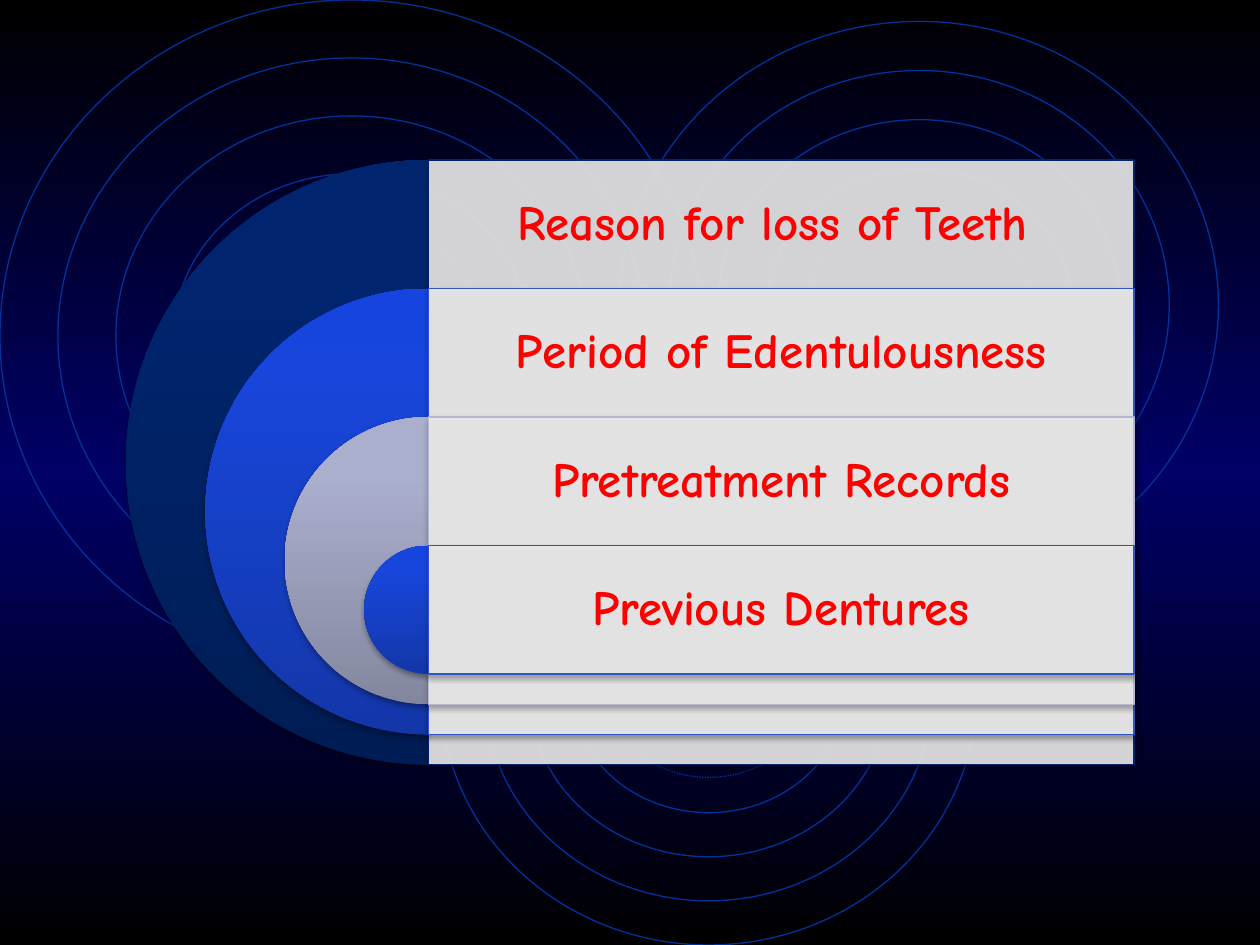
import copy
import lxml.etree
import pptx
import pptx.dml.color
import pptx.enum.dml
import pptx.enum.shapes
import pptx.enum.text
import pptx.oxml.ns
import pptx.util

NAVY = ("001C54", "00256E", "00256E")
BLUE = ("1336A8", "1846DA", "1544DF")
GREY = ("83879E", "ABAFCE", "ABB0CF")
THEME = {
    "background": ("000000", "000066", "000000"),
    "ring": "003399",
    "panel": "EAEAEA",
    "text": "FF0000",
    "font": "Comic Neue",
    "size": 28,
    "line": 0.75,
}
SHAPE = pptx.enum.shapes.MSO_SHAPE
rgb = pptx.dml.color.RGBColor.from_string
qn = pptx.oxml.ns.qn


def set_gradient(fill, colors, middle, angle):
    fill.gradient()
    fill.gradient_angle = angle
    last = fill.gradient_stops[1]._gs
    last.addprevious(copy.deepcopy(last))
    for stop, color, position in zip(fill.gradient_stops, colors, (0, middle, 1)):
        stop.color.rgb = rgb(color)
        stop.position = position


def add_shadow(sp):
    sp.shadow.inherit = False
    effects = sp._element.spPr.find(qn("a:effectLst"))
    shadow = lxml.etree.SubElement(effects, qn("a:outerShdw"), blurRad="40000",
                                   dist="23000", dir="5400000", rotWithShape="0")
    color = lxml.etree.SubElement(shadow, qn("a:srgbClr"), val="000000")
    lxml.etree.SubElement(color, qn("a:alpha"), val="35000")


prs = pptx.Presentation()
prs.slide_width = pptx.util.Inches(10)
prs.slide_height = pptx.util.Inches(7.5)
col, row = prs.slide_width / 10, prs.slide_height / 7.5
s = prs.slides.add_slide(prs.slide_layouts[6])
set_gradient(s.background.fill, THEME["background"], 0.5, 270)

ripples = [(0, 0, 5.58, 5.33, 0.46), (3.5, 3.5, 4.25, 4, 0.35), (4.92, 0.17, 4.75, 4.5, 0.39)]
for left, top, width, height, gap in ripples:
    for step in (0, 1, 2, 3, 3.8):
        inset = step * gap
        sp = s.shapes.add_shape(SHAPE.OVAL, int((left + inset) * col), int((top + inset) * row),
                                int((width - 2 * inset) * col), int((height - 2 * inset) * row))
        sp.shadow.inherit = False
        sp.fill.background()
        sp.line.color.rgb = rgb(THEME["ring"])
        sp.line.width = pptx.util.Pt(THEME["line"])
        if step == 3.8:
            sp.line.dash_style = pptx.enum.dml.MSO_LINE.ROUND_DOT

levels = [
    ("Reason for loss of Teeth ", NAVY, "002671"),
    ("Period of Edentulousness", BLUE, "3054CA"),
    ("Pretreatment Records", GREY, "B4B8D0"),
    ("Previous Dentures", BLUE, "3054CA"),
]
axis, first, band, panel_width = 3.4, 1.27, 1.02, 5.6
for i, (label, colors, edge) in enumerate(levels):
    top = int((first + i * band) * row)
    size = 4.8 - i * 1.26
    height = int(size * row)

    sp = s.shapes.add_shape(SHAPE.PIE, int((axis - size / 2) * col), top, int(size * col), height)
    sp.adjustments[0], sp.adjustments[1] = 54, 162
    set_gradient(sp.fill, colors, 0.8, 90)
    sp.line.fill.background()
    add_shadow(sp)

    sp = s.shapes.add_shape(SHAPE.RECTANGLE, int(axis * col), top, int(panel_width * col), height)
    sp.fill.solid()
    sp.fill.fore_color.rgb = rgb(THEME["panel"])
    color = sp._element.spPr.find(qn("a:solidFill")).find(qn("a:srgbClr"))
    lxml.etree.SubElement(color, qn("a:alpha"), val="90000")
    sp.line.color.rgb = rgb(edge)
    sp.line.width = pptx.util.Pt(THEME["line"])
    add_shadow(sp)

    sp = s.shapes.add_textbox(int(axis * col), top, int(panel_width * col), int(band * row))
    tf = sp.text_frame
    tf.word_wrap = True
    tf.vertical_anchor = pptx.enum.text.MSO_ANCHOR.MIDDLE
    tf.margin_left = tf.margin_right = tf.margin_top = tf.margin_bottom = pptx.util.Inches(0.12)
    tf.text = label
    p = tf.paragraphs[0]
    p.alignment = pptx.enum.text.PP_ALIGN.CENTER
    p.line_spacing = 0.9
    r = p.runs[0]
    r.font.name = THEME["font"]
    r.font.size = pptx.util.Pt(THEME["size"])
    r.font.bold = True
    r.font.color.rgb = rgb(THEME["text"])

prs.save("out.pptx")
